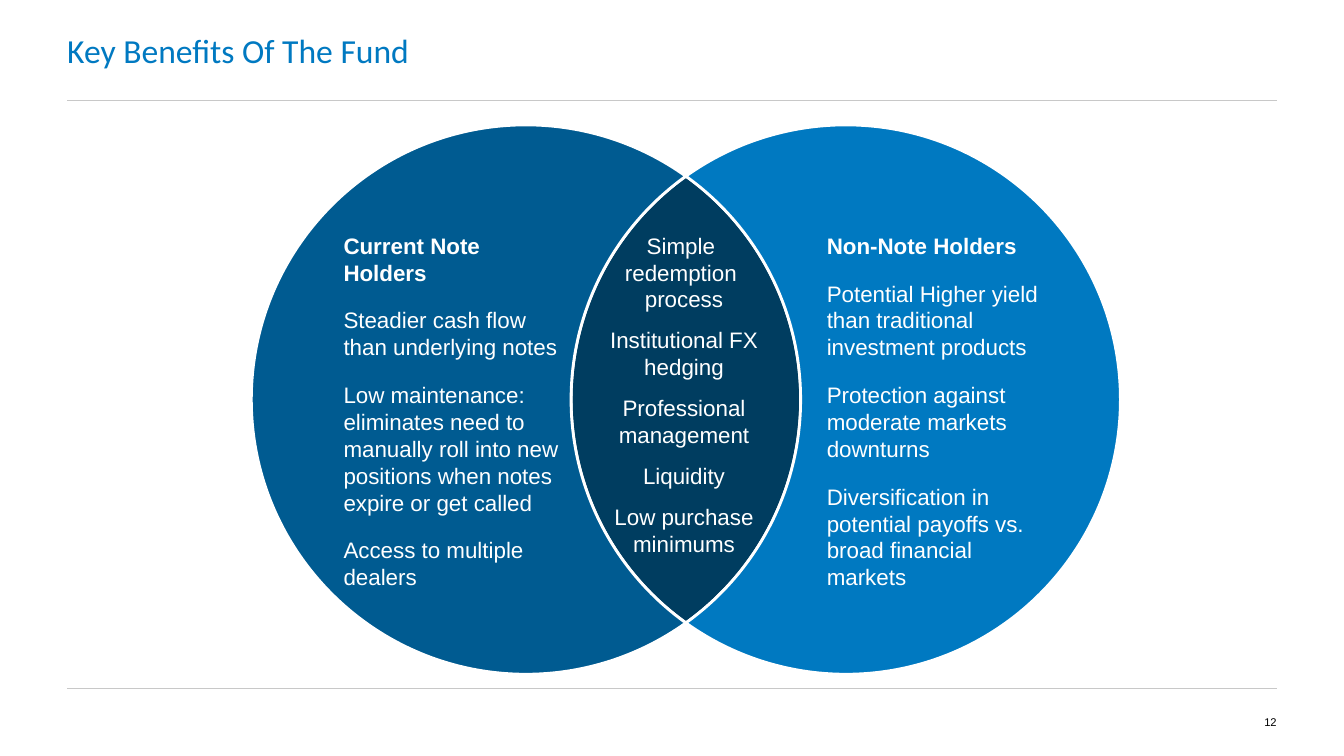
"""Builds a slide with a two-circle Venn diagram of fund benefits."""
from math import acos, cos, pi, sin, tan

from lxml.etree import SubElement
from pptx import Presentation
from pptx.dml.color import RGBColor
from pptx.enum.shapes import MSO_CONNECTOR
from pptx.enum.text import MSO_ANCHOR as ANCHOR, MSO_AUTO_SIZE as AUTO, PP_ALIGN as ALIGN
from pptx.oxml.ns import qn
from pptx.util import Pt

LEFT, WIDTH = 48, 864
RULES_Y = (72, 492)
RADIUS = 196.2
LEFT_X, RIGHT_X, CENTRE_Y = 375.75, 604.15, 285.4
TEXT_Y, TEXT_H = 165.6, 316
WHITE, BLUE = "FFFFFF", "0079C1"

CURRENT_HOLDERS = [
    "Current Note Holders",
    "Steadier cash flow than underlying notes",
    "Low maintenance: eliminates need to manually roll into new positions "
    "when notes expire or get called",
    "Access to multiple dealers",
]
SHARED = [
    "Simple \nredemption \nprocess",
    "Institutional FX hedging",
    "Professional management",
    "Liquidity",
    "Low purchase minimums",
]
NON_HOLDERS = [
    "Non-Note Holders",
    "Potential Higher yield than traditional investment products",
    "Protection against moderate markets downturns",
    "Diversification in potential payoffs vs. broad financial \nmarkets",
]


def rgb(color):
    """Return the colour for a hex string."""
    return RGBColor.from_string(color)


def add_rule(s, y):
    """Draw a thin grey line across the content width."""
    line = s.shapes.add_connector(
        MSO_CONNECTOR.STRAIGHT, Pt(LEFT), Pt(y), Pt(LEFT + WIDTH), Pt(y))
    line.line.color.rgb = rgb("C8C8C8")
    line.line.width = Pt(0.75)
    SubElement(line._element.spPr, qn("a:effectLst"))


def arc(cx, *angles):
    """Return Bezier curves (two controls and an end) through the angles of a circle."""
    curves = []
    for t, u in zip(angles, angles[1:]):
        k = 4 / 3 * tan((u - t) / 4)
        units = [(cos(t) - k * sin(t), sin(t) + k * cos(t)),
                 (cos(u) + k * sin(u), sin(u) - k * cos(u)),
                 (cos(u), sin(u))]
        curves.append([(Pt(cx + RADIUS * x), Pt(CENTRE_Y + RADIUS * y)) for x, y in units])
    return curves


def add_region(s, curves, color):
    """Draw a filled closed outline of curves with a white border."""
    ends = [curve[-1] for curve in curves]
    builder = s.shapes.build_freeform(*ends[-1])
    builder.add_line_segments(ends, close=True)
    sp = builder.convert_to_shape()
    for segment, curve in zip(list(sp._element.iter(qn("a:lnTo"))), curves):
        bezier = segment.makeelement(qn("a:cubicBezTo"))
        for x, y in curve:
            SubElement(bezier, qn("a:pt"), x=str(x - sp.left), y=str(y - sp.top))
        segment.getparent().replace(segment, bezier)
    sp.shadow.inherit = False
    sp.fill.solid()
    sp.fill.fore_color.rgb = rgb(color)
    sp.line.color.rgb = rgb(WHITE)
    sp.line.width = Pt(2)


def add_venn(s):
    """Draw the overlap and the two crescents."""
    a = acos((RIGHT_X - LEFT_X) / 2 / RADIUS)
    add_region(s, arc(LEFT_X, -a, 0, a) + arc(RIGHT_X, pi - a, pi, pi + a), "003D60")
    add_region(s, arc(LEFT_X, a, pi / 2, pi, 3 * pi / 2, 2 * pi - a)
               + arc(RIGHT_X, pi + a, pi, pi - a), "005B91")
    add_region(s, arc(RIGHT_X, a - pi, -pi / 2, 0, pi / 2, pi - a)
               + arc(LEFT_X, a, 0, -a), BLUE)


def set_frame(tf, anchor):
    """Remove the insets and set wrapping and anchoring."""
    tf.margin_left = tf.margin_top = tf.margin_right = tf.margin_bottom = 0
    tf.word_wrap = True
    tf.auto_size = AUTO.NONE
    tf.vertical_anchor = anchor


def add_runs(p, text, size, color, font="Arial", bold=False):
    """Add text as runs, with a line break at each newline."""
    for i, part in enumerate(text.split("\n")):
        if i:
            p.add_line_break()
        r = p.add_run()
        r.text = part
        r.font.name = font
        r.font.size = Pt(size)
        r.font.bold = bold
        r.font.color.rgb = rgb(color)


def add_text(s, box, paragraphs, size=16, color=WHITE, align=ALIGN.LEFT,
             anchor=ANCHOR.TOP, gap=0, heading=False):
    """Add a text box, optionally with a bold first paragraph."""
    tf = s.shapes.add_textbox(*map(Pt, box)).text_frame
    set_frame(tf, anchor)
    for i, text in enumerate(paragraphs):
        p = tf.add_paragraph() if i else tf.paragraphs[0]
        p.alignment = align
        p.space_after = Pt(gap)
        add_runs(p, text, size, color, bold=heading and i == 0)


def add_title(s, text):
    """Place and format the title placeholder."""
    title = s.shapes.title
    title.left, title.top, title.width, title.height = Pt(LEFT), 0, Pt(912), Pt(72)
    tf = title.text_frame
    set_frame(tf, ANCHOR.MIDDLE)
    p = tf.paragraphs[0]
    p.alignment = ALIGN.LEFT
    add_runs(p, text, 24, BLUE, "Calibri")


def main():
    """Build and save the slide."""
    prs = Presentation()
    prs.slide_width, prs.slide_height = Pt(960), Pt(540)
    s = prs.slides.add_slide(prs.slide_layouts[5])
    for y in RULES_Y:
        add_rule(s, y)
    add_title(s, "Key Benefits Of The Fund")
    add_venn(s)
    add_text(s, (864, 492, 48, 48), ["12"], 8, "000000", ALIGN.RIGHT, ANCHOR.MIDDLE)
    add_text(s, (245.4, TEXT_Y, 160, TEXT_H), CURRENT_HOLDERS, gap=15, heading=True)
    add_text(s, (590.6, TEXT_Y, 172, TEXT_H), NON_HOLDERS, gap=15, heading=True)
    add_text(s, (419.8, TEXT_Y, 137.5, TEXT_H), SHARED, align=ALIGN.CENTER, gap=10)
    prs.save("out.pptx")


if __name__ == "__main__":
    main()
